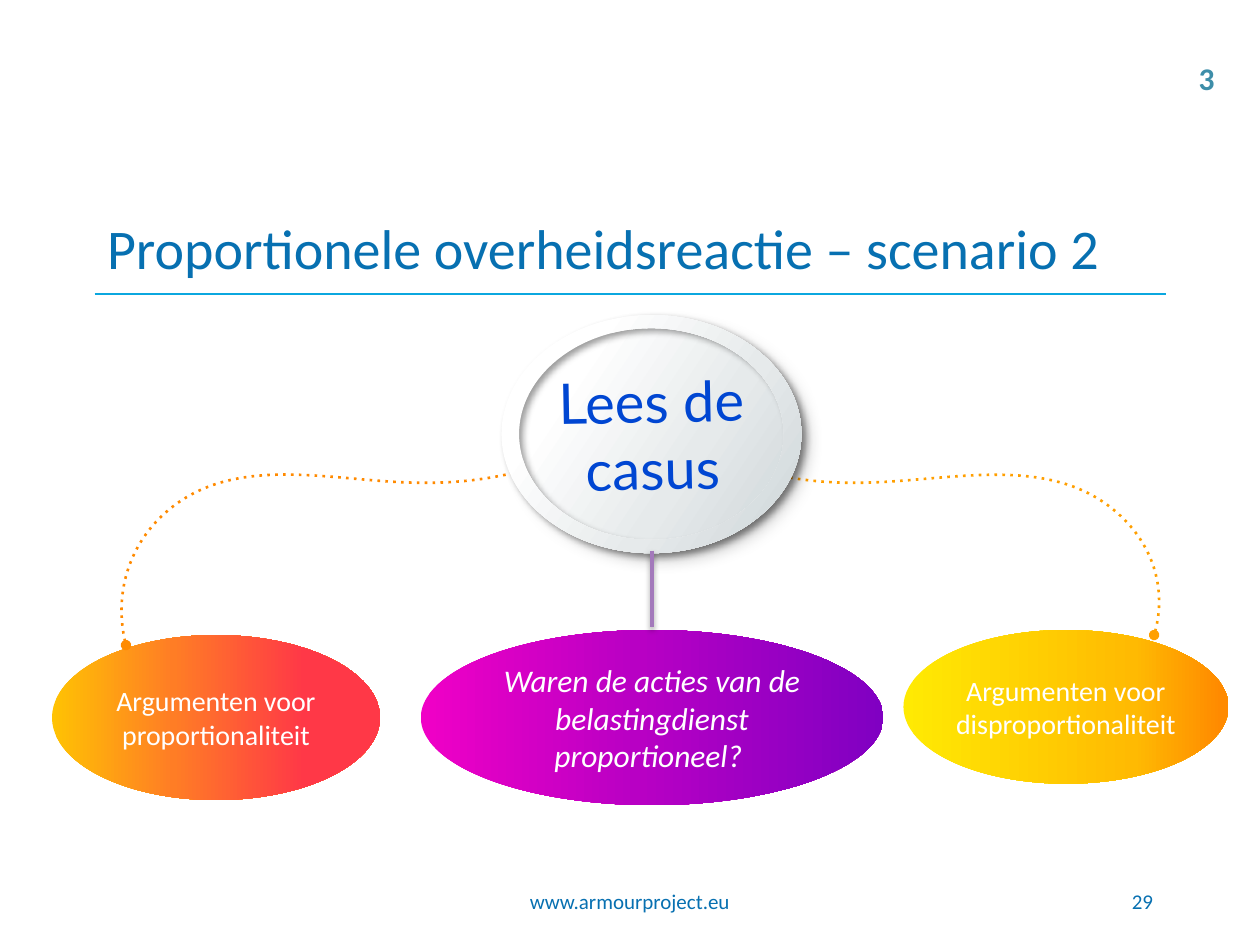
from dataclasses import dataclass
from typing import Any

import pptx
import pptx.dml.color
import pptx.enum.shapes
import pptx.enum.text
import pptx.oxml
import pptx.oxml.ns
import pptx.util

# The slide is a grid of 100 columns by 75 rows
WIDTH, HEIGHT = pptx.util.Inches(10), pptx.util.Inches(7.5)
CELL = WIDTH / 100
COLORS = {"blue": "0770B1", "rule": "0BA7DF", "white": "FFFFFF", "royal": "0046D2",
          "teal": "3E8EA9", "mauve": "A379BB", "orange": "FF8A00", "amber": "FF9F00"}
STEEL = ((23, "FFFFFF"), (63, "E6EAEB"), (100, "CDD5D8"))
ROUND = 0.55  # handle length of a quarter circle
ALIGN = pptx.enum.text.PP_ALIGN
OVAL = pptx.enum.shapes.MSO_SHAPE.OVAL
Point = tuple[float, float]


@dataclass
class Bubble:
    text: str
    box: tuple
    stops: tuple
    size: int = 16
    italic: bool = False


@dataclass
class Curve:
    start: Point
    arcs: tuple
    closed: bool = False


@dataclass
class Trail:
    color: str
    box: tuple
    curve: Curve


BUBBLES = (
    Bubble("Argumenten voor proportionaliteit", (4.13, 50.4, 26.03, 13.1),
           ((0, "FFC203"), (37, "FF7D25"), (77, "FF3847"))),
    Bubble("Argumenten voor disproportionaliteit", (71.7, 50, 25.8, 12.2),
           ((0, "FFEA03"), (71, "FFBA02"), (98, "FF8A00"))),
    Bubble("Waren de acties van de belastingdienst proportioneel? ", (33.4, 50, 36.7, 13.9),
           ((0, "F000C6"), (47, "B800C4"), (100, "8000C2")), 18, True),
)
TRAILS = (
    Trail("orange", (9.6, 37.3, 32.1, 13.9),
          Curve((41.7, 37.3), (((38.7, 38.1), (35.7, 38.4), (32.6, 38.3)),
                               ((25.6, 38.1), (17.7, 35.8), (12.4, 41.4)),
                               ((10, 44), (9.1, 47.7), (10, 51.2))))),
    Trail("amber", (59.9, 37.3, 32.1, 13.1),
          Curve((59.9, 37.3), (((62.9, 38.1), (65.9, 38.4), (69, 38.3)),
                               ((76, 38.1), (83.9, 35.9), (89.2, 41.2)),
                               ((91.6, 43.6), (92.6, 47.1), (91.6, 50.4))))),
)


def grid(*cells: float) -> list[int]:
    return [round(cell * CELL) for cell in cells]


def tint(name: str) -> Any:
    return pptx.dml.color.RGBColor.from_string(COLORS[name])


def node(tag: str, inner: str = "", **attrs: Any) -> Any:
    marks = "".join(f' {key}="{value}"' for key, value in attrs.items())
    space = pptx.oxml.ns.nsdecls("a")
    return pptx.oxml.parse_xml(f"<a:{tag} {space}{marks}>{inner}</a:{tag}>")


def write(shape: Any, text: str, *, size: int, color: str, font: str = "Calibri",
          align: Any = ALIGN.LEFT, inset: Point = (1, 0.5), wrap: bool = True,
          bold: bool = False, italic: bool = False) -> None:
    frame = shape.text_frame
    frame.word_wrap = wrap
    frame.vertical_anchor = pptx.enum.text.MSO_ANCHOR.MIDDLE
    frame.margin_left = frame.margin_right = grid(inset[0])[0]
    frame.margin_top = frame.margin_bottom = grid(inset[1])[0]
    para = frame.paragraphs[0]
    para.alignment = align
    run = para.add_run()
    run.text = text
    run.font.name, run.font.size = font, pptx.util.Pt(size)
    run.font.bold, run.font.italic = bold, italic
    run.font.color.rgb = tint(color)


def blend(shape: Any, stops: tuple, angle: int = 0) -> None:
    """Fill with a gradient of any number of stops, without outline."""
    shape.shadow.inherit = False
    shape.line.fill.background()
    marks = "".join(f'<a:gs pos="{pos * 1000}"><a:srgbClr val="{hue}"/></a:gs>'
                    for pos, hue in stops)
    shape.fill.gradient()
    old = shape._element.spPr.find(pptx.oxml.ns.qn("a:gradFill"))
    old.getparent().replace(old, node(
        "gradFill", f'<a:gsLst>{marks}</a:gsLst><a:lin ang="{angle * 60000}" scaled="0"/>',
        rotWithShape=1))


def shade(shape: Any, blur: float, dist: float, angle: int) -> None:
    """Cast an outer shadow in place of the theme's own."""
    props = shape._element.spPr
    for old in props.findall(pptx.oxml.ns.qn("a:effectLst")):
        props.remove(old)
    props.append(node(
        "effectLst", f'<a:outerShdw blurRad="{round(blur * 12700)}" '
        f'dist="{round(dist * 12700)}" dir="{angle * 60000}" algn="tl" rotWithShape="0">'
        '<a:srgbClr val="000000"><a:alpha val="38000"/></a:srgbClr></a:outerShdw>'))


def oval(shapes: Any, box: tuple, stops: tuple, angle: int = 0) -> Any:
    shape = shapes.add_shape(OVAL, *grid(*box))
    blend(shape, stops, angle)
    return shape


def label(shapes: Any, text: str, box: tuple, **style: Any) -> None:
    write(shapes.add_textbox(*grid(*box)), text, **style)


def join(shapes: Any, ends: tuple, color: str, width: float) -> Any:
    kind = pptx.enum.shapes.MSO_CONNECTOR.STRAIGHT
    line = shapes.add_connector(kind, *grid(*ends))
    line.line.color.rgb, line.line.width = tint(color), pptx.util.Pt(width)
    line._element.spPr.append(node("effectLst"))
    return line


def draw(shapes: Any, box: tuple, *curves: Curve) -> Any:
    """Freeform that spans the box, outlined by smooth curves."""
    left, top, wide, high = box
    form = shapes.build_freeform(*grid(left, top))
    form.add_line_segments([grid(left + wide, top + high)], close=False)
    shape = form.convert_to_shape()
    shape.shadow.inherit = False
    route = shape._element.spPr.find(".//" + pptx.oxml.ns.qn("a:path"))
    for old in list(route):
        route.remove(old)

    def spots(*points: Point) -> str:
        pairs = [grid(x - left, y - top) for x, y in points]
        return "".join(f'<a:pt x="{x}" y="{y}"/>' for x, y in pairs)

    for curve in curves:
        route.append(node("moveTo", spots(curve.start)))
        for arc in curve.arcs:
            route.append(node("cubicBezTo", spots(*arc)))
        if curve.closed:
            route.append(node("close"))
    return shape


def trace(shapes: Any, trail: Trail) -> None:
    shape = draw(shapes, trail.box, trail.curve)
    shape.fill.background()
    shape.line.color.rgb, shape.line.width = tint(trail.color), pptx.util.Pt(1.5)
    line = shape.line._get_or_add_ln()
    line.append(node("custDash", '<a:ds d="100000" sp="200000"/>'))
    for end in ("headEnd", "tailEnd"):
        line.append(node(end, type="oval"))


def loop(hub: Point, radii: Point, way: int) -> Curve:
    """Ellipse of four arcs; way is 1 or -1 for its direction."""
    def spot(x: float, y: float) -> Point:
        return hub[0] + x * radii[0], hub[1] + y * radii[1] * way
    arcs, (x, y) = [], (1, 0)
    for _ in range(4):
        arcs.append((spot(x - ROUND * y, y + ROUND * x),
                     spot(ROUND * x - y, ROUND * y + x), spot(-y, x)))
        x, y = -y, x
    return Curve(spot(1, 0), tuple(arcs), True)


def main() -> None:
    deck = pptx.Presentation()
    deck.slide_width, deck.slide_height = WIDTH, HEIGHT
    slide = deck.slides.add_slide(deck.slide_layouts[5])
    shapes = slide.shapes

    # Title, rule and footer
    join(shapes, (7.5, 23.33, 92.5, 23.33), "rule", 1)
    title = shapes.title
    title.left, title.top, title.width, title.height = grid(7.5, 15.85, 85, 7.5)
    write(title, "Proportionele overheidsreactie – scenario 2", size=32, color="blue")
    label(shapes, "www.armourproject.eu", (38.33, 69.5, 23.33, 4),
          size=12, color="blue", align=ALIGN.CENTER)
    label(shapes, "29", (71.67, 69.5, 20.83, 4), size=12, color="blue", align=ALIGN.RIGHT)

    # Bubbles, the outer two with a dotted trail
    for place, bubble in enumerate(BUBBLES):
        shape = oval(shapes, bubble.box, bubble.stops)
        write(shape, bubble.text, size=bubble.size, color="white", italic=bubble.italic,
              align=ALIGN.CENTER, inset=(0.4, 0.5))
        for trail in TRAILS[place:place + 1]:
            trace(shapes, trail)

    # Central disc with its raised rim
    disc = oval(shapes, (40.6, 25.5, 22.3, 17.9), STEEL, 35)
    disc.rotation = -1.2
    shade(disc, 12, 7.1, 39)
    write(disc, "Lees de casus", size=32, color="royal", font="Lato",
          align=ALIGN.CENTER, inset=(0.4, 0.4))
    hub = (51.7, 34.45)
    rim = draw(shapes, (39.8, 25, 23.8, 18.9),
               loop(hub, (11.9, 9.45), 1), loop(hub, (10.5, 8.4), -1))
    blend(rim, STEEL, 35)
    shade(rim, 4, 2.8, 39)

    # Stem and step number
    stem = join(shapes, (51.75, 43.7, 51.75, 49.8), "mauve", 2)
    shade(stem, 3.1, 1.6, 90)
    label(shapes, "3", (94.15, 4.2, 3.3, 4), size=18, color="teal", bold=True, wrap=False)

    deck.save("out.pptx")


if __name__ == "__main__":
    main()
